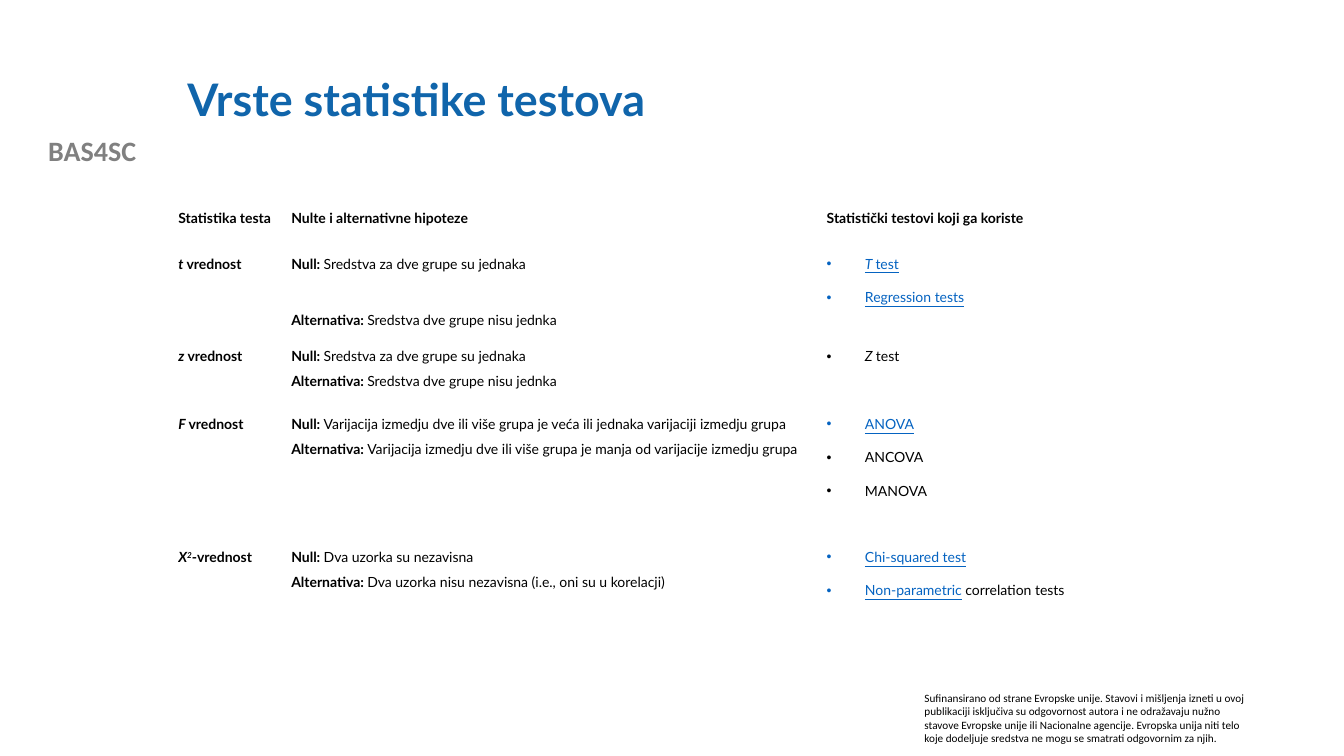
from lxml.etree import SubElement
from pptx import Presentation
from pptx.dml.color import RGBColor
from pptx.enum.text import MSO_ANCHOR, PP_ALIGN
from pptx.oxml.ns import qn
from pptx.util import Inches, Pt

BLACK = RGBColor(0, 0, 0)
GREY = RGBColor(0x80, 0x80, 0x80)
TITLE_BLUE = RGBColor(0x10, 0x65, 0xAB)
LINK_BLUE = RGBColor(0x05, 0x63, 0xC1)

TITLE = "Vrste statistike testova"
PROJECT = "BAS4SC"
FUNDING = (
    "Sufinansirano od strane Evropske unije. Stavovi i mišljenja izneti u ovoj "
    "publikaciji isključiva su odgovornost autora i ne odražavaju nužno stavove "
    "Evropske unije ili Nacionalne agencije. Evropska unija niti telo koje "
    "dodeljuje sredstva ne mogu se smatrati odgovornim za njih."
)

HEADERS = ["Statistika testa", "Nulte i alternativne hipoteze",
           "Statistički testovi koji ga koriste"]
# Span styles: b bold, i italic, u underlined link, s superscript
# Each row: label spans, null hypothesis, alternative, tests
ROWS = [
    ([("t ", "bi"), ("vrednost", "b")],
     "Sredstva za dve grupe su jednaka",
     "Sredstva dve grupe nisu jednka",
     [[("T ", "iu"), ("test", "u")], [("Regression tests", "u")]]),
    ([("z ", "bi"), ("vrednost", "b")],
     "Sredstva za dve grupe su jednaka",
     "Sredstva dve grupe nisu jednka",
     [[("Z ", "i"), ("test", "")]]),
    ([("F ", "bi"), ("vrednost", "b")],
     "Varijacija izmedju dve ili više grupa je veća ili jednaka varijaciji izmedju grupa",
     "Varijacija izmedju dve ili više grupa je manja od varijacije izmedju grupa",
     [[("ANOVA", "u")], [("ANCOVA", "")], [("MANOVA", "")]]),
    ([("X", "bi"), ("2", "bis"), ("-vrednost", "b")],
     "Dva uzorka su nezavisna",
     "Dva uzorka nisu nezavisna (i.e., oni su u korelacji)",
     [[("Chi-squared test", "u")],
      [("Non-parametric", "u"), (" correlation tests", "")]]),
]
COLUMN_WIDTHS = [1.12, 5.31, 3.44]
ROW_HEIGHTS = [0.45, 0.92, 0.67, 1.32, 0.73]
WIDE_GAP, BULLET_GAP = 22.5, 6


def add_label(slide, place, text, size, font, color, bold=False):
    box = slide.shapes.add_textbox(*map(Inches, place))
    box.text_frame.word_wrap = True
    box.text_frame.text = text
    para = box.text_frame.paragraphs[0]
    para.font.size, para.font.name = Pt(size), font
    para.font.color.rgb, para.font.bold = color, bold
    return box


def add_bullet(para):
    properties = para._p.get_or_add_pPr()
    properties.set("marL", str(Inches(0.38)))
    properties.set("indent", str(-Inches(0.38)))
    SubElement(properties, qn("a:buFont"), typeface="Arial")
    SubElement(properties, qn("a:buChar"), char="•")
    tabs = SubElement(properties, qn("a:tabLst"))
    SubElement(tabs, qn("a:tab"), pos=str(Inches(0.5)), algn="l")


def fill_cell(cell, paragraphs, gaps, bulleted=False):
    """Write one list of (text, style) spans per paragraph, with the gap after each."""
    cell.fill.background()
    cell.margin_left = cell.margin_right = Inches(0.01)
    cell.margin_top = cell.margin_bottom = Inches(0.01)
    frame = cell.text_frame
    for index, (spans, gap) in enumerate(zip(paragraphs, gaps)):
        para = frame.add_paragraph() if index else frame.paragraphs[0]
        if bulleted:
            add_bullet(para)
        para.alignment = PP_ALIGN.JUSTIFY
        para.line_spacing = 1.5
        para.space_after = Pt(gap)
        for text, style in spans:
            span = para.add_run()
            span.text = text
            font = span.font
            font.name, font.size = "Lato", Pt(10)
            font.bold, font.italic = "b" in style, "i" in style
            font.underline = "u" in style
            font.color.rgb = LINK_BLUE if "u" in style else BLACK
            if "s" in style:
                span._r.get_or_add_rPr().set("baseline", "30000")


def add_tests_table(slide):
    frame = slide.shapes.add_table(
        len(ROWS) + 1, len(HEADERS), Inches(1.76), Inches(1.99),
        Inches(sum(COLUMN_WIDTHS)), Inches(sum(ROW_HEIGHTS)))
    table = frame.table
    table.first_row = table.horz_banding = False
    for column, width in zip(table.columns, COLUMN_WIDTHS):
        column.width = Inches(width)
    for row, height in zip(table.rows, ROW_HEIGHTS):
        row.height = Inches(height)

    for column, header in enumerate(HEADERS):
        fill_cell(table.cell(0, column), [[(header, "b")]], [WIDE_GAP])
    for row, (label, null, alternative, tests) in enumerate(ROWS, 1):
        gap = WIDE_GAP if row == 1 else 0
        hypotheses = [[("Null: ", "b"), (null, "")],
                      [("Alternativa: ", "b"), (alternative, "")]]
        fill_cell(table.cell(row, 0), [label], [gap])
        fill_cell(table.cell(row, 1), hypotheses, [gap, 0])
        fill_cell(table.cell(row, 2), tests, [BULLET_GAP] * len(tests), bulleted=True)


def main():
    deck = Presentation()
    deck.slide_width, deck.slide_height = Inches(13.33), Inches(7.5)
    slide = deck.slides.add_slide(deck.slide_layouts[6])

    project = add_label(slide, (0, 1.28, 1.83, 0.44), PROJECT, 20, "Calibri", GREY, True)
    project.text_frame.paragraphs[0].alignment = PP_ALIGN.CENTER
    add_label(slide, (9.07, 6.81, 3.43, 0.64), FUNDING, 8, "Calibri", BLACK)
    title = add_label(slide, (1.76, 0.4, 10.66, 1.22), TITLE, 32, "Lato", TITLE_BLUE, True)
    title.text_frame.vertical_anchor = MSO_ANCHOR.MIDDLE
    title.text_frame.paragraphs[0].line_spacing = 0.9
    add_tests_table(slide)

    deck.save("out.pptx")


if __name__ == "__main__":
    main()
